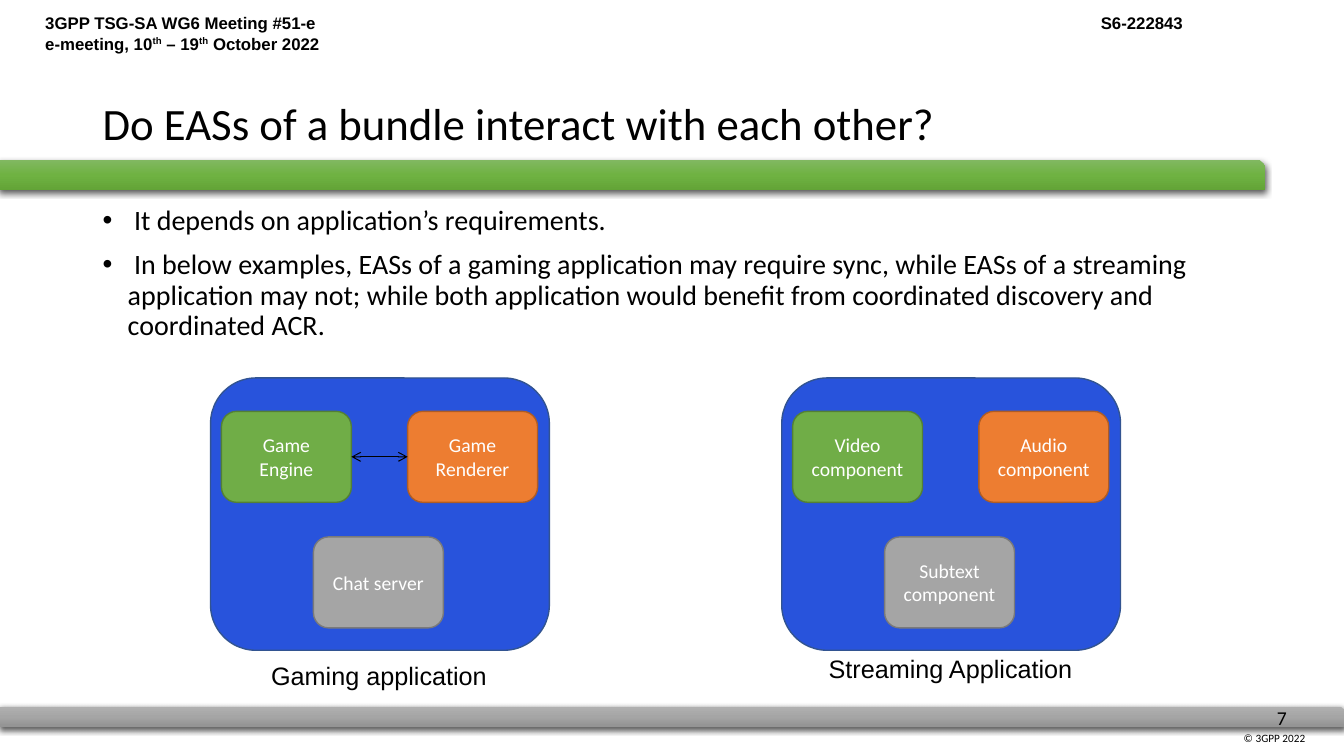
import pptx
import pptx.chart.data
import pptx.dml.color
import pptx.enum.shapes
import pptx.enum.text
import pptx.oxml.ns
import pptx.util
from lxml import etree

Pt = pptx.util.Pt
qn = pptx.oxml.ns.qn
SHAPE = pptx.enum.shapes.MSO_SHAPE
ALIGN = pptx.enum.text.PP_ALIGN
ANCHOR = pptx.enum.text.MSO_ANCHOR

COLORS = {
    "text": "000000", "white": "FFFFFF",
    "panel": "2853DC", "panel_edge": "325491",
    "green": "70AD47", "green_edge": "538035",
    "orange": "ED7D31", "orange_edge": "AF5C24",
    "gray": "A5A5A5", "gray_edge": "7A7A7A",
    "gray_top": "AFAFAF", "gray_bottom": "939393",
    "green_top": "81B861", "green_middle": "6FB242", "green_bottom": "62A336",
}

BARS = [
    ((0, 504.7, 960, 14.4), ("gray_top", "gray", "gray_bottom")),
    ((-0.7, 114.5, 904.3, 21.6), ("green_top", "green_middle", "green_bottom")),
]
MEETING = [
    [("3GPP TSG-SA WG6 Meeting #51-e", False)],
    [("e-meeting, 10", False), ("th", True), (" – 19", False), ("th", True),
     (" October 2022", False)],
]
DOCUMENT = "S6-222843 "
TITLE = "Do EASs of a bundle interact with each other?"
POINTS = [
    " It depends on application’s requirements.",
    " In below examples, EASs of a gaming application may require sync, while EASs of a "
    "streaming application may not; while both application would benefit from coordinated "
    "discovery and coordinated ACR.",
]
APPLICATIONS = [
    {"parts": ["Game Engine", "Game Renderer", "Chat server"], "synced": True,
     "caption": "Gaming application", "caption_at": (185.8, 468, 169.9, 29)},
    {"parts": ["Video component", "Audio component", "Subtext component"], "synced": False,
     "caption": "Streaming Application", "caption_at": (583.9, 463, 190.1, 29)},
]
COPYRIGHT = "© 3GPP 2022"
PAGE = "7"

PANEL_LEFT, PANEL_TOP, PANEL_PITCH = 150.4, 270, 408
PANEL_SIZE = (242, 194.5)
PART_SIZE = (92.8, 65)
PART_OFFSETS = [(7.8, 23.8), (140.8, 23.8), (73.5, 113.5)]
PART_COLORS = ["green", "orange", "gray"]

deck = pptx.Presentation()
deck.slide_width, deck.slide_height = Pt(960), Pt(540)
slide = deck.slides.add_slide(deck.slide_layouts[6])


def rgb(name):
    return pptx.dml.color.RGBColor.from_string(COLORS[name])


def add_run(paragraph, text, size, font, color="text", bold=False, raised=False):
    run = paragraph.add_run()
    run.text = text
    run.font.size, run.font.name, run.font.bold = Pt(size), font, bold
    run.font.color.rgb = rgb(color)
    if raised:
        run._r.get_or_add_rPr().set("baseline", "30000")


def add_text(at, lines, size, font, align=ALIGN.LEFT, wrap=True, bold=False, anchor=ANCHOR.TOP):
    frame = slide.shapes.add_textbox(*map(Pt, at)).text_frame
    frame.word_wrap, frame.vertical_anchor = wrap, anchor
    for number, line in enumerate(lines):
        paragraph = frame.add_paragraph() if number else frame.paragraphs[0]
        paragraph.alignment = align
        for text, raised in line:
            add_run(paragraph, text, size, font, bold=bold, raised=raised)
    return frame


def add_bar(at, shades):
    bar = slide.shapes.add_shape(SHAPE.SNIP_1_RECTANGLE, *map(Pt, at))
    bar.line.fill.background()
    bar.shadow.inherit = False
    bar.fill.gradient()
    bar.fill.gradient_angle = 270
    properties = bar._element.spPr
    stops = properties.find(".//" + qn("a:gsLst"))
    for stop in list(stops):
        stops.remove(stop)
    for position, shade in zip((0, 50000, 100000), shades):
        stop = etree.SubElement(stops, qn("a:gs"), pos=str(position))
        etree.SubElement(stop, qn("a:srgbClr"), val=COLORS[shade])
    shadow = etree.SubElement(properties.find(qn("a:effectLst")), qn("a:outerShdw"),
                              blurRad=str(Pt(4.5)), dist=str(Pt(1.5)), dir="5400000",
                              algn="ctr", rotWithShape="0")
    shade = etree.SubElement(shadow, qn("a:srgbClr"), val=COLORS["text"])
    etree.SubElement(shade, qn("a:alpha"), val="63000")


def add_block(left, top, size, color, label=None):
    block = slide.shapes.add_shape(SHAPE.ROUNDED_RECTANGLE, *map(Pt, (left, top, *size)))
    block.shadow.inherit = False
    block.fill.solid()
    block.fill.fore_color.rgb = rgb(color)
    block.line.color.rgb = rgb(color + "_edge")
    block.line.width = Pt(1)
    if label:
        frame = block.text_frame
        frame.word_wrap, frame.vertical_anchor = True, ANCHOR.MIDDLE
        frame.paragraphs[0].alignment = ALIGN.CENTER
        add_run(frame.paragraphs[0], label, 14, "Calibri", "white")
    return block


def add_sync(first, second):
    sync = slide.shapes.add_connector(pptx.enum.shapes.MSO_CONNECTOR.STRAIGHT, 0, 0, 0, 0)
    sync.begin_connect(first, 3)
    sync.end_connect(second, 1)
    sync.line.color.rgb = rgb("text")
    sync.line.width = Pt(0.75)
    for end in ("headEnd", "tailEnd"):
        etree.SubElement(sync.line._get_or_add_ln(), qn("a:" + end), type="arrow")
    etree.SubElement(sync._element.spPr, qn("a:effectLst"))


for at, shades in BARS:
    add_bar(at, shades)
add_text((881.3, 519, 77.8, 16.6), [[(COPYRIGHT, False)]], 8, "Calibri")
add_text((905, 500.4, 31, 24.5), [[(PAGE, False)]], 14, "Calibri", wrap=False)
add_text((25.2, 5.8, 274.3, 36), MEETING, 12, "Arial", bold=True)
add_text((740.2, 5.8, 115.2, 21.6), [[(DOCUMENT, False)]], 12, "Arial", ALIGN.RIGHT, bold=True)

title = add_text((66.2, 46.1, 828, 87.1), [[(TITLE, False)]], 32, "Calibri", anchor=ANCHOR.MIDDLE)
title.paragraphs[0].line_spacing = 0.9

body = add_text((66.2, 144, 828, 342.7), [[(point, False)] for point in POINTS], 20, "Calibri")
for number, paragraph in enumerate(body.paragraphs):
    paragraph.line_spacing = 0.9
    paragraph.space_before = Pt(10 if number else 0)
    properties = paragraph._p.get_or_add_pPr()
    properties.set("marL", str(Pt(18)))
    properties.set("indent", str(Pt(-18)))
    etree.SubElement(properties, qn("a:buFont"), typeface="Arial")
    etree.SubElement(properties, qn("a:buChar"), char="•")

for number, application in enumerate(APPLICATIONS):
    left = PANEL_LEFT + number * PANEL_PITCH
    add_block(left, PANEL_TOP, PANEL_SIZE, "panel")
    parts = [
        add_block(left + across, PANEL_TOP + down, PART_SIZE, color, label)
        for (across, down), color, label in zip(PART_OFFSETS, PART_COLORS, application["parts"])
    ]
    if application["synced"]:
        add_sync(parts[0], parts[1])
    add_text(application["caption_at"], [[(application["caption"], False)]], 18, "Arial",
             ALIGN.CENTER, wrap=False)

deck.save("out.pptx")
